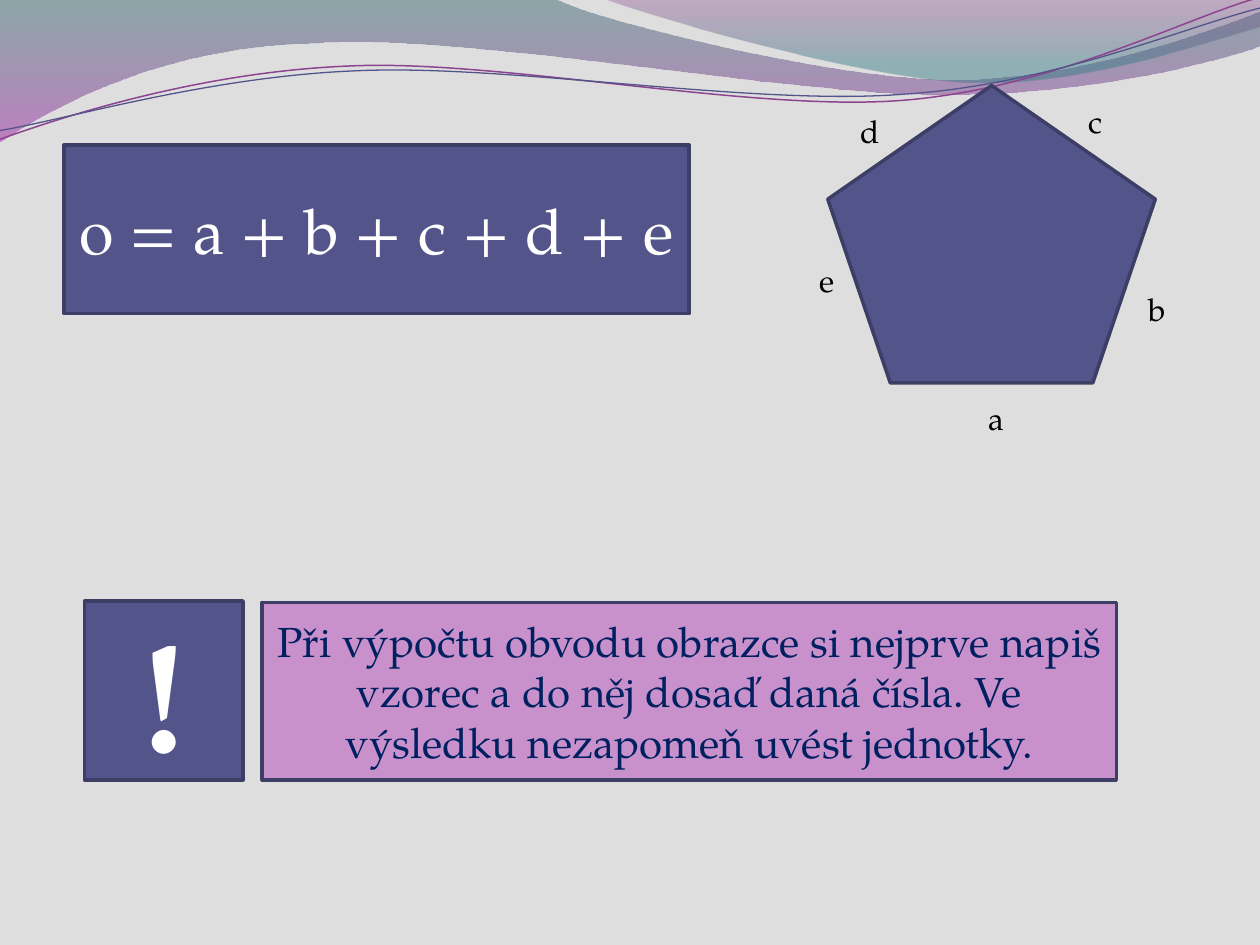
from lxml import etree
from pptx import Presentation
from pptx import util as u
from pptx.dml import color
from pptx.enum import shapes, text
from pptx.oxml import ns


def rgb(value):
    return color.RGBColor.from_string(value)


def put_text(sp, content, size=18, hue="000000", bold=None, align=None, anchor=None):
    tf = sp.text_frame
    tf.word_wrap = True
    tf.vertical_anchor = anchor
    p = tf.paragraphs[0]
    p.alignment = align
    r = p.add_run()
    r.text = content
    r.font.name = "TeX Gyre Pagella"
    r.font.size = u.Pt(size)
    r.font.bold = bold
    r.font.color.rgb = rgb(hue)


prs = Presentation()
prs.slide_width, prs.slide_height = u.Inches(10), u.Inches(7.5)
s = prs.slides.add_slide(prs.slide_layouts[6])
s.background.fill.solid()
s.background.fill.fore_color.rgb = rgb("DEDEDE")

waves = [
    ([(0, 0), (4.4, -0.01), (4.76, 0.17, 6.64, 0.63, 7.58, 0.63),
      (8.53, 0.63, 9.58, 0.26, 10, 0.09), (10.01, 0.36),
      (9.83, 0.44, 8.7, 0.76, 7.46, 0.75), (6.22, 0.75, 3.82, 0.28, 2.57, 0.34),
      (1.29, 0.36, 0.46, 0.83, -0.01, 1.13), (0, 0)],
     [(0, "2D6368", 45), (1, "A530A9", 55)], None),
    ([(4.79, -0.01), (5.09, 0.11, 6.82, 0.62, 7.69, 0.65),
      (8.56, 0.69, 9.61, 0.32, 10, 0.21), (10, 0), (4.79, -0.01)],
     [(0, "7F2F82", 30), (0.8, "2F7B82", 45)], None),
    ([(-0.02, 0.87), (0.47, 0.72, 1.58, 0.41, 2.78, 0.42),
      (3.96, 0.42, 5.91, 0.93, 7.12, 0.9), (8.32, 0.87, 9.4, 0.36, 10, 0.22)],
     None, ("8D4490", 0.85)),
    ([(-0.02, 0.8), (0.46, 0.75, 1.64, 0.45, 2.83, 0.46),
      (4.03, 0.46, 5.96, 0.89, 7.16, 0.85), (8.35, 0.83, 9.42, 0.42, 10.02, 0.3)],
     None, ("53548A", 0.75)),
]
for segments, stops, line in waves:
    ends = [(u.Inches(seg[-2]), u.Inches(seg[-1])) for seg in segments]
    builder = s.shapes.build_freeform(*ends[0])
    builder.add_line_segments(ends[1:], close=stops is not None)
    sp = builder.convert_to_shape()
    sp.shadow.inherit = False
    edges = list(sp._element.iter(ns.qn("a:lnTo")))
    for edge, seg in zip(edges, segments[1:]):
        if len(seg) == 6:
            edge.tag = ns.qn("a:cubicBezTo")
            for i in range(2):
                pt = etree.Element(ns.qn("a:pt"),
                                   x=str(u.Inches(seg[2 * i]) - sp.left),
                                   y=str(u.Inches(seg[2 * i + 1]) - sp.top))
                edge.insert(i, pt)
    if stops:
        sp.line.fill.background()
        sp.fill.gradient()
        sp.fill.gradient_angle = 270
        for stop, (position, hue, alpha) in zip(sp.fill.gradient_stops, stops):
            stop.position = position
            stop.color.rgb = rgb(hue)
        tints = sp.fill._xPr.iter(ns.qn("a:srgbClr"))
        for tint, (position, hue, alpha) in zip(tints, stops):
            etree.SubElement(tint, ns.qn("a:alpha"), val=str(alpha * 1000))
    else:
        sp.rotation = 357.3
        sp.fill.background()
        sp.line.color.rgb = rgb(line[0])
        sp.line.width = u.Pt(line[1])

kinds = shapes.MSO_SHAPE
advice = ("Při výpočtu obvodu obrazce si nejprve napiš vzorec a do něj dosaď daná čísla. "
          "Ve výsledku nezapomeň uvést jednotky.")
figures = [
    (kinds.REGULAR_PENTAGON, (6.57, 0.68, 2.6, 2.36), "53548A", None, {}),
    (kinds.RECTANGLE, (0.51, 1.15, 4.96, 1.34), "53548A", "o = a + b + c + d + e",
     {"size": 36, "hue": "FFFFFF"}),
    (kinds.RECTANGLE, (0.67, 4.77, 1.26, 1.42), "53548A", "!",
     {"size": 88, "hue": "FFFFFF", "bold": True}),
    (kinds.RECTANGLE, (2.08, 4.78, 6.78, 1.41), "C991CB", advice,
     {"size": 24, "hue": "002060"}),
]
sides = [("c", 8.54, 0.76, 0.79), ("a", 7.75, 3.12, 0.71), ("b", 9.02, 2.25, 0.55),
         ("d", 6.73, 0.84, 0.55), ("e", 6.41, 2.02, 0.47)]
for kind, box, fill, content, style in figures:
    sp = s.shapes.add_shape(kind, *map(u.Inches, box))
    sp.shadow.inherit = False
    sp.fill.solid()
    sp.fill.fore_color.rgb = rgb(fill)
    sp.line.color.rgb = rgb("3D3E66")
    sp.line.width = u.Pt(2)
    if content:
        put_text(sp, content, align=text.PP_ALIGN.CENTER,
                 anchor=text.MSO_ANCHOR.MIDDLE, **style)

for name, left, top, width in sides:
    sp = s.shapes.add_textbox(*map(u.Inches, (left, top, width, 0.4)))
    put_text(sp, name)
    sp.text_frame.auto_size = text.MSO_AUTO_SIZE.SHAPE_TO_FIT_TEXT

prs.save("out.pptx")
